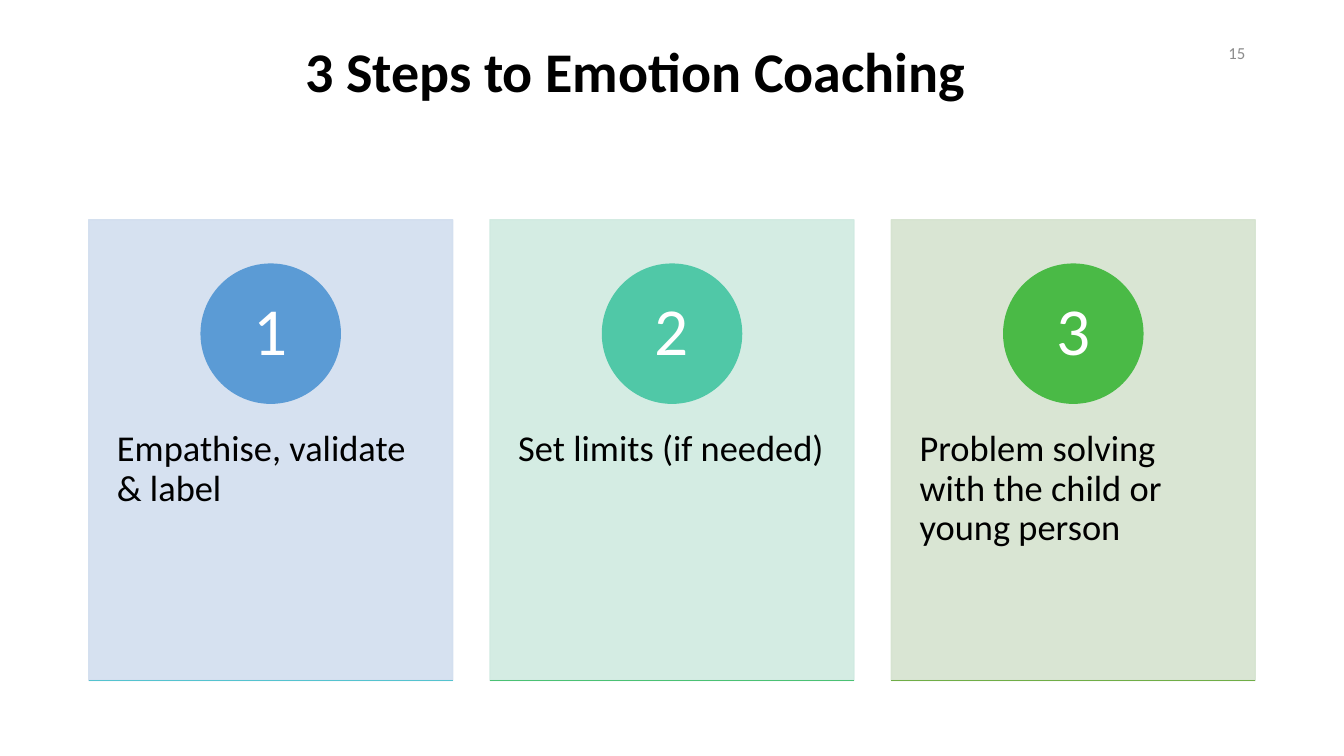
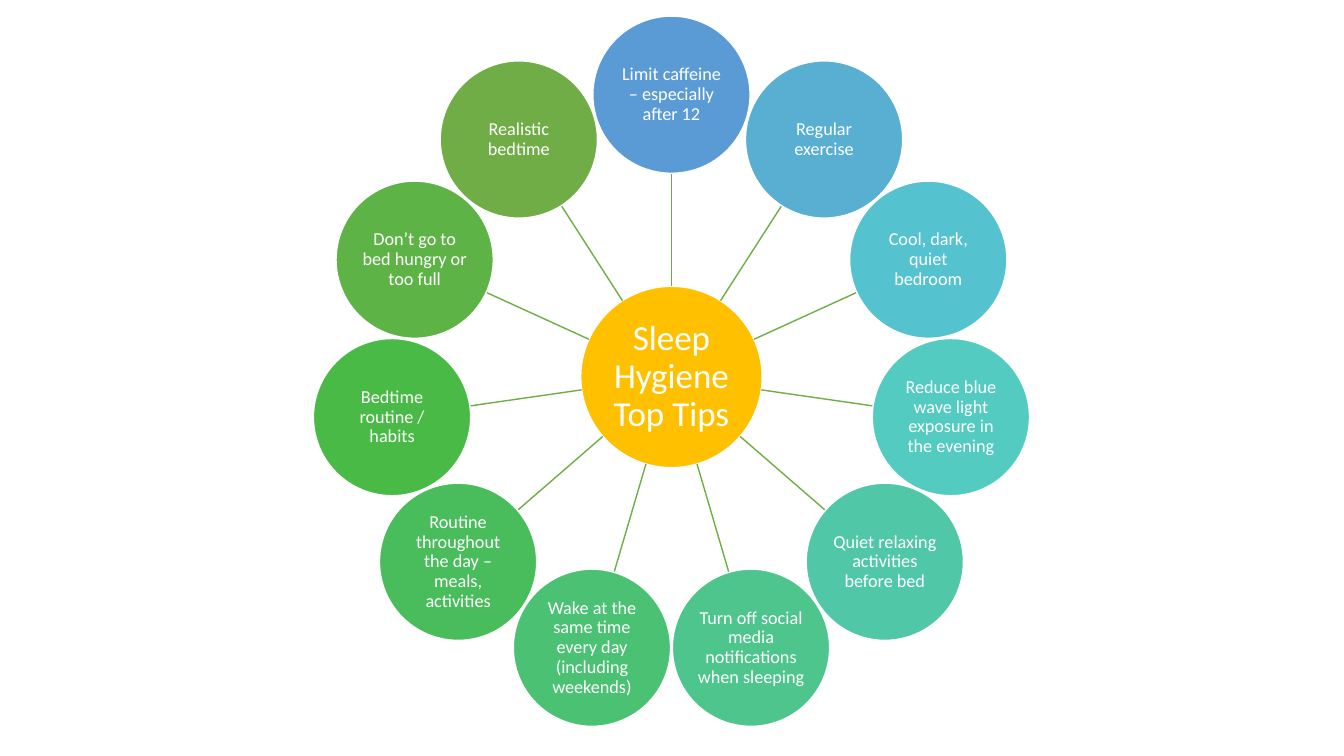
"""Build two slides: three coaching step cards and a wheel of sleep tips."""
from dataclasses import dataclass
from math import cos, radians, sin

from lxml import etree
from pptx import Presentation
from pptx.dml.color import RGBColor
from pptx.enum.shapes import MSO_CONNECTOR as Link, MSO_SHAPE as Shape
from pptx.enum.text import MSO_ANCHOR as Anchor, MSO_AUTO_SIZE as Fit, PP_ALIGN as Align
from pptx.oxml.ns import qn
from pptx.util import Inches, Pt


@dataclass(frozen=True)
class Theme:
    font: str = "Calibri"
    black: str = "000000"
    white: str = "FFFFFF"
    grey: str = "8C8C8C"
    hub: str = "FFC000"
    spoke: str = "70AD47"
    title_size: int = 40
    number_size: int = 12
    step_size: int = 48
    card_size: int = 26
    hub_size: int = 25
    tip_size: int = 13
    line_width: int = 1
    card_opacity: int = 90


THEME = Theme()

TITLE = "3 Steps to Emotion Coaching"
SLIDE_NUMBER = "15"
STEPS = [
    ("Empathise, validate & label", "D2DEEF", "5B9BD5", "55C3CF"),
    ("Set limits (if needed)", "D0EAE1", "50C8A7", "4BC174"),
    ("Problem solving with the child or young person", "D5E3CF", "4ABA46", "70AD47"),
]
HUB = "Sleep Hygiene Top Tips"
TIPS = [
    ("Limit caffeine – especially after 12", "5B9BD5"),
    ("Regular exercise", "58AFD2"),
    ("Cool, dark, quiet bedroom", "55C3CF"),
    ("Reduce blue wave light exposure in the evening", "53CBC1"),
    ("Quiet relaxing activities before bed", "50C8A7"),
    ("Turn off social media notifications when sleeping", "4DC58D"),
    ("Wake at the same time every day (including weekends)", "4BC174"),
    ("Routine throughout the day – meals, activities", "49BD5B"),
    ("Bedtime routine / habits", "4ABA46"),
    ("Don’t go to bed hungry or too full", "5EB347"),
    ("Realistic bedtime", "70AD47"),
]


def write(box, text, size, color=THEME.white, bold=False, align=Align.CENTER,
          anchor=Anchor.MIDDLE, insets=(0.1, 0.05, 0.1, 0.05), spacing=0.9):
    frame = box.text_frame
    frame.word_wrap = True
    frame.auto_size = Fit.NONE
    frame.vertical_anchor = anchor
    (frame.margin_left, frame.margin_top,
     frame.margin_right, frame.margin_bottom) = map(Inches, insets)
    para = frame.paragraphs[0]
    para.alignment = align
    para.line_spacing = spacing
    span = para.add_run()
    span.text = text
    span.font.name = THEME.font
    span.font.size = Pt(size)
    span.font.bold = bold
    span.font.color.rgb = RGBColor.from_string(color)


def add_block(page, kind, left, top, width, height, fill, outline, opacity=100):
    block = page.shapes.add_shape(kind, *map(Inches, (left, top, width, height)))
    block.shadow.inherit = False
    block.fill.solid()
    block.fill.fore_color.rgb = RGBColor.from_string(fill)
    block.line.color.rgb = RGBColor.from_string(outline)
    block.line.width = Pt(THEME.line_width)
    if opacity < 100:
        for color in block.element.spPr.iter(qn("a:srgbClr")):
            etree.SubElement(color, qn("a:alpha"), val=str(opacity * 1000))
    return block


def add_disc(page, x, y, radius, fill, outline, text, size, insets):
    disc = add_block(page, Shape.OVAL, x - radius, y - radius,
                     2 * radius, 2 * radius, fill, outline)
    write(disc, text, size, insets=insets)


def add_line(page, start, end, color):
    line = page.shapes.add_connector(Link.STRAIGHT, *map(Inches, (*start, *end)))
    line.line.color.rgb = RGBColor.from_string(color)
    line.line.width = Pt(THEME.line_width)
    etree.SubElement(line.element.spPr, qn("a:effectLst"))


def build_steps(deck):
    page = deck.slides.add_slide(deck.slide_layouts.get_by_name("Title Only"))
    title = page.shapes.title
    title.left, title.top, title.width, title.height = map(Inches, (1.8, -0.03, 9, 1.45))
    write(title, TITLE, THEME.title_size, THEME.black, bold=True, spacing=1)
    number = page.shapes.add_textbox(*map(Inches, (11.45, 0.35, 1, 0.35)))
    write(number, SLIDE_NUMBER, THEME.number_size, THEME.grey, align=Align.RIGHT, spacing=1)

    first, top, width, height, pitch = 0.88, 2.18, 3.61, 4.57, 3.98
    for index, (text, tint, accent, rule) in enumerate(STEPS):
        left = first + index * pitch
        card = add_block(page, Shape.RECTANGLE, left, top, width, height,
                         tint, tint, THEME.card_opacity)
        write(card, text, THEME.card_size, THEME.black, align=Align.LEFT,
              anchor=Anchor.TOP, insets=(0.28, 2.09, 0.28, 0.36))
        add_disc(page, left + width / 2, top + 1.13, 0.69, accent, accent,
                 str(index + 1), THEME.step_size, (0.11, 0.01, 0.11, 0.01))
        base = top + height
        add_line(page, (left, base), (left + width, base), rule)


def build_wheel(deck):
    page = deck.slides.add_slide(deck.slide_layouts.get_by_name("Blank"))
    x, y, orbit, hub_radius, tip_radius = 6.66, 3.74, 2.8, 0.9, 0.78

    def point(angle, distance):
        return x + distance * sin(angle), y - distance * cos(angle)

    add_disc(page, x, y, hub_radius, THEME.hub, THEME.white, HUB,
             THEME.hub_size, (0.02,) * 4)
    for index, (text, fill) in enumerate(TIPS):
        angle = radians(360 * index / len(TIPS))
        add_line(page, point(angle, hub_radius), point(angle, orbit - tip_radius), THEME.spoke)
        add_disc(page, *point(angle, orbit), tip_radius, fill, THEME.white, text,
                 THEME.tip_size, (0.01,) * 4)


def main():
    deck = Presentation()
    deck.slide_width, deck.slide_height = Inches(13.33), Inches(7.5)
    build_steps(deck)
    build_wheel(deck)
    deck.save("out.pptx")


if __name__ == "__main__":
    main()
